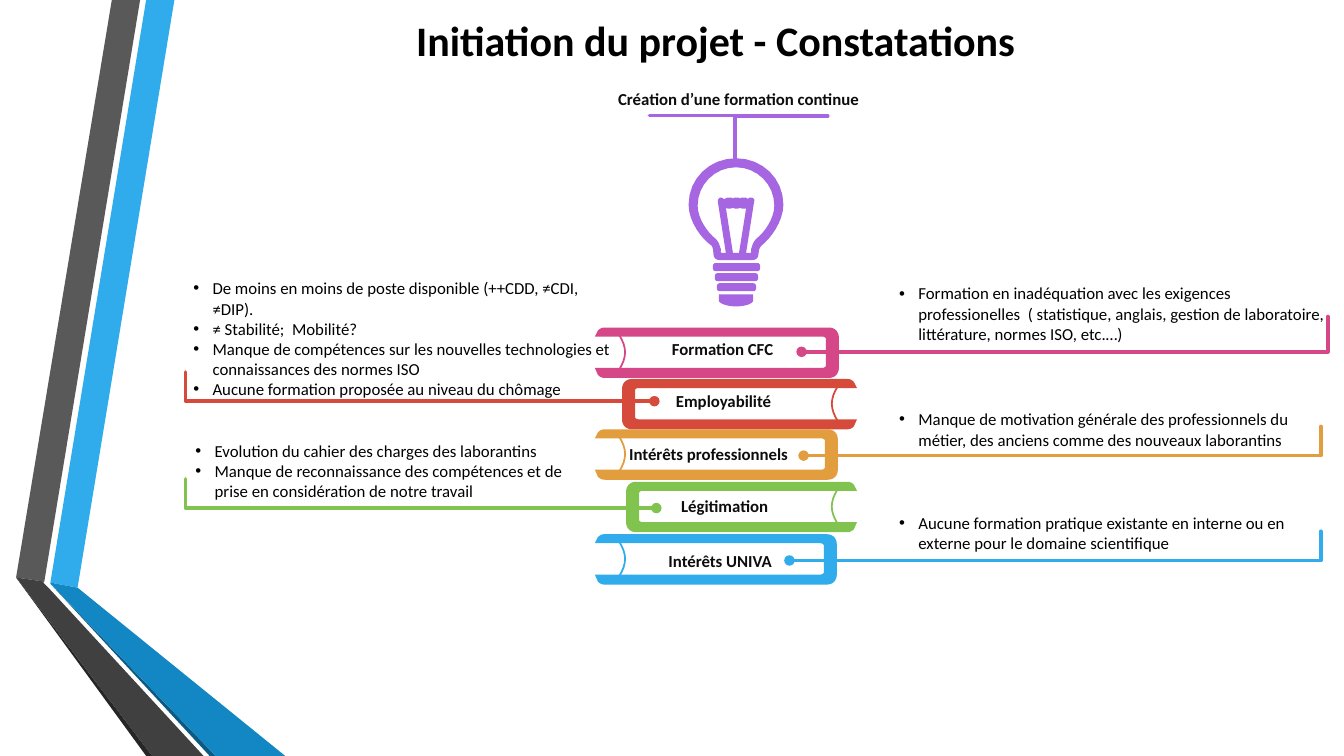
from lxml.etree import SubElement
from pptx import Presentation
from pptx.dml.color import RGBColor
from pptx.enum.shapes import MSO_CONNECTOR
from pptx.enum.text import MSO_ANCHOR, PP_ALIGN
from pptx.oxml.ns import qn
from pptx.util import Pt

PX = 9144  # 100 px to the inch
CURVE_STEPS = 8

BLACK = RGBColor(0x00, 0x00, 0x00)
INK = RGBColor(0x0D, 0x0D, 0x0D)
WHITE = RGBColor(0xFF, 0xFF, 0xFF)
BLUE = RGBColor(0x30, 0xAC, 0xEC)
MID_BLUE = RGBColor(0x12, 0x87, 0xC3)
DARK_BLUE = RGBColor(0x0C, 0x5A, 0x82)
GLASS_BLUE = RGBColor(0x24, 0x7F, 0xAF)
GREY = RGBColor(0x59, 0x59, 0x59)
MID_GREY = RGBColor(0x40, 0x40, 0x40)
DARK_GREY = RGBColor(0x26, 0x26, 0x26)
PINK = RGBColor(0xD6, 0x47, 0x87)
RED = RGBColor(0xD6, 0x4A, 0x3B)
ORANGE = RGBColor(0xE2, 0x9D, 0x3E)
GREEN = RGBColor(0x80, 0xC3, 0x4F)
PURPLE = RGBColor(0xA6, 0x66, 0xE1)

deck = Presentation()
deck.slide_width, deck.slide_height = 1333 * PX, 750 * PX
page = deck.slides.add_slide(deck.slide_layouts[6])


def trace(contours, fill=None, line=None, weight=1.25):
    """Draw contours of points (x, y) and cubic curves (x1, y1, x2, y2, x, y).

    Without a fill the contour stays open and starts with a dot.
    """
    builder = None
    for contour in contours:
        points = [contour[0]]
        for step in contour[1:]:
            if len(step) == 2:
                points.append(step)
                continue
            x0, y0 = points[-1]
            x1, y1, x2, y2, x3, y3 = step
            for i in range(1, CURVE_STEPS + 1):
                t = i / CURVE_STEPS
                a, b, c, d = (1 - t) ** 3, 3 * t * (1 - t) ** 2, 3 * t * t * (1 - t), t ** 3
                points.append((a * x0 + b * x1 + c * x2 + d * x3,
                               a * y0 + b * y1 + c * y2 + d * y3))
        points = [(x * PX, y * PX) for x, y in points]
        if builder is None:
            builder = page.shapes.build_freeform(*points[0], scale=1.0)
        else:
            builder.move_to(*points[0])
        builder.add_line_segments(points[1:], close=fill is not None)
    shape = builder.convert_to_shape()
    shape.shadow.inherit = False
    if fill is None:
        shape.fill.background()
    else:
        shape.fill.solid()
        shape.fill.fore_color.rgb = fill
    if line is None:
        shape.line.fill.background()
    else:
        shape.line.color.rgb = line
        shape.line.width = Pt(weight)
    if fill is None:
        stroke = shape.line._get_or_add_ln()
        stroke.set("cap", "rnd")
        SubElement(stroke, qn("a:round"))
        SubElement(stroke, qn("a:headEnd"), type="oval")


def write(area, lines, size=12, bold=False, colour=BLACK, align=PP_ALIGN.LEFT,
          inset=10, bullets=False):
    box = page.shapes.add_textbox(*(value * PX for value in area))
    frame = box.text_frame
    frame.word_wrap = True
    frame.margin_left = frame.margin_right = inset * PX
    frame.margin_top = frame.margin_bottom = 5 * PX
    for i, line in enumerate(lines):
        para = frame.paragraphs[0] if i == 0 else frame.add_paragraph()
        para.text = line
        para.alignment = align
        para.font.name, para.font.size, para.font.bold = "Calibri", Pt(size), bold
        para.font.color.rgb = colour
        if bullets:
            props = para._p.get_or_add_pPr()
            props.set("marL", str(19 * PX))
            props.set("indent", str(-19 * PX))
            bullet_font = props.makeelement(qn("a:buFont"), {"typeface": "Arial"})
            bullet = props.makeelement(qn("a:buChar"), {"char": "•"})
            props.insert(0, bullet_font)
            bullet_font.addnext(bullet)
    return frame


# Folded ribbons on the left edge
ribbons = [
    (BLUE, [(50, 578), (77, 583), (173, 0), (145, 0)]),
    (GREY, [(139, 0), (111, 0), (16, 573), (44, 577)]),
    (DARK_GREY, [(16, 573), (145, 750), (151, 750)]),
    (DARK_BLUE, [(50, 579), (208, 750), (214, 750)]),
    (MID_BLUE, [(50, 579), (214, 750), (283, 750), (77, 583), (50, 578)]),
    (MID_GREY, [(202, 750), (48, 583), (43, 578), (44, 577), (16, 573), (151, 750)]),
]
for colour, corners in ribbons:
    trace([corners], fill=colour)

title = write((162, -34, 1096, 147), ["Initiation du projet - Constatations"],
              size=30, bold=True, align=PP_ALIGN.CENTER)
title.vertical_anchor = MSO_ANCHOR.MIDDLE

# Hanging light bulb
write((601, 83, 315, 30), ["Création d’une formation continue"], bold=True, colour=INK, inset=12)
trace([[(729, 180), (729, 115), (821, 115)]], line=PURPLE, weight=2.5)
trace([[(730, 162), (752, 162, 771, 181, 771, 204), (771, 219, 762, 233, 749, 240),
        (747, 253), (713, 253), (711, 241), (710, 240),
        (697, 233, 688, 219, 688, 204), (688, 181, 707, 162, 730, 162)]],
      fill=WHITE, line=GLASS_BLUE)
bulb = [
    # outer rim
    [(730, 157), (756, 157, 777, 177, 777, 203), (777, 220, 764, 237, 755, 244),
     (752, 248, 753, 249, 752, 254), (751, 257, 749, 258, 746, 258), (714, 258),
     (711, 258, 709, 257, 708, 254), (707, 249, 708, 248, 706, 244),
     (696, 237, 683, 220, 683, 203), (683, 177, 704, 157, 730, 157)],
    # inside of the rim, around the filament
    [(730, 166), (709, 166, 692, 183, 692, 204), (692, 217, 702, 231, 710, 237),
     (714, 242, 713, 242, 715, 247), (715, 251, 714, 251, 718, 251), (720, 251),
     (712, 200), (712, 198, 713, 196, 715, 196), (716, 196, 718, 197, 718, 198),
     (719, 197, 721, 196, 723, 196), (724, 196, 726, 196, 727, 197),
     (728, 196, 729, 196, 730, 196), (732, 196, 733, 196, 734, 197),
     (735, 196, 736, 196, 738, 196), (739, 196, 741, 196, 742, 198),
     (742, 196, 744, 196, 745, 196), (747, 196, 749, 198, 748, 200), (740, 251),
     (742, 251), (746, 251, 745, 251, 745, 247), (747, 242, 746, 242, 750, 237),
     (758, 231, 768, 217, 768, 204), (768, 183, 751, 166, 730, 166)],
    # gap inside the filament
    [(727, 206), (726, 207, 724, 207, 723, 207), (722, 207, 721, 207, 720, 206),
     (727, 251), (733, 251), (740, 207), (739, 207, 739, 207, 738, 207),
     (736, 207, 735, 207, 734, 206), (733, 207, 732, 207, 730, 207),
     (729, 207, 728, 207, 727, 206)],
    # foot
    [(713, 292), (747, 292), (747, 298), (747, 301, 740, 304, 730, 304),
     (721, 304, 713, 301, 713, 298)],
]
for i in range(3):
    left, right, top = 707 + 2 * i, 754 - 2 * i, 261 + 10 * i
    bulb.append([(left + 3, top), (right - 3, top), (right, top, right, top + 3, right, top + 4),
                 (right, top + 5, right, top + 8, right - 3, top + 8), (left + 3, top + 8),
                 (left, top + 8, left, top + 5, left, top + 4),
                 (left, top + 3, left, top, left + 3, top)])
trace(bulb, fill=PURPLE)
bar = page.shapes.add_connector(MSO_CONNECTOR.STRAIGHT, 732 * PX, 115 * PX, 644 * PX, 115 * PX)
bar.line.color.rgb = PURPLE
bar.line.width = Pt(2.25)
bar.line._get_or_add_ln().set("cap", "rnd")
SubElement(bar._element.spPr, qn("a:effectLst"))

# Stack of books: colour, spine x, top, label, label area, label alignment,
# lead line (start x, y, end x, rise), note area, note lines
books = [
    (PINK, 832, 325, "Formation CFC", (644, 331, 135, 30), PP_ALIGN.RIGHT,
     (795, 349, 1317, 35), (882, 276, 443, 71),
     ["Formation en inadéquation avec les exigences professionelles  ( statistique, anglais, "
      "gestion de laboratoire, littérature, normes ISO, etc.…)"]),
    (RED, 617, 376, "Employabilité", (653, 383, 124, 30), PP_ALIGN.RIGHT,
     (649, 398, 184, 29), (182, 271, 437, 151),
     ["De moins en moins de poste disponible (++CDD, ≠CDI, ≠DIP).",
      "≠ Stabilité;  Mobilité?",
      "Manque de compétences sur les nouvelles technologies et connaissances des normes ISO",
      "Aucune formation proposée au niveau du chômage"]),
    (ORANGE, 831, 426, "Intérêts professionnels", (612, 435, 197, 30), PP_ALIGN.LEFT,
     (797, 452, 1310, 29), (882, 401, 428, 50),
     ["Manque de motivation générale des professionnels du métier, "
      "des anciens comme des nouveaux laborantins"]),
    (GREEN, 621, 478, "Légitimation", (654, 487, 120, 30), PP_ALIGN.RIGHT,
     (651, 504, 184, 29), (184, 432, 401, 71),
     ["Evolution du cahier des charges des laborantins",
      "Manque de reconnaissance des compétences et de prise en considération de notre travail"]),
    (BLUE, 830, 530, "Intérêts UNIVA", (651, 541, 144, 30), PP_ALIGN.LEFT,
     (783, 556, 1310, 29), (882, 504, 428, 50),
     ["Aucune formation pratique existante en interne ou en externe "
      "pour le domaine scientifique"]),
]
for colour, spine, top, label, label_area, align, lead, note_area, notes in books:
    # Distances run from the spine towards the open end of the book
    way, end, pages = (1, 850, 831) if spine < 700 else (-1, 590, 614)
    inner, arc = spine + 12 * way, pages - 8 * way
    fold, corner, tip, round_end = (spine + 16 * way, spine + 10 * way,
                                    end - 3 * way, end - 10 * way)
    low = top + 50
    trace([[(inner, top + 7), (pages, top + 7), (arc, top + 20, arc, top + 29, pages, top + 42),
            (inner, top + 42)]], fill=WHITE, line=colour)
    trace([[(corner, top), (round_end, top), (end - 7 * way, top, end - 5 * way, top + 1, tip, top + 3),
            (end, top + 9), (fold, top + 9), (inner + 2 * way, top + 9, inner, top + 11, inner, top + 13),
            (inner, low - 14), (inner, low - 12, inner + 2 * way, low - 10, fold, low - 10),
            (end, low - 10), (tip, low - 3), (end - 5 * way, low - 1, end - 7 * way, low, round_end, low),
            (corner, low), (spine + 4 * way, low, spine, low - 4, spine, low - 10),
            (spine, top + 10), (spine, top + 4, spine + 4 * way, top, corner, top)]], fill=colour)
    start, level, stop, rise = lead
    trace([[(start, level), (stop, level), (stop, level - rise)]], line=colour, weight=2.5)
    write(note_area, notes, bullets=True)
    write(label_area, [label], bold=True, colour=INK, align=align, inset=12)

deck.save("out.pptx")
